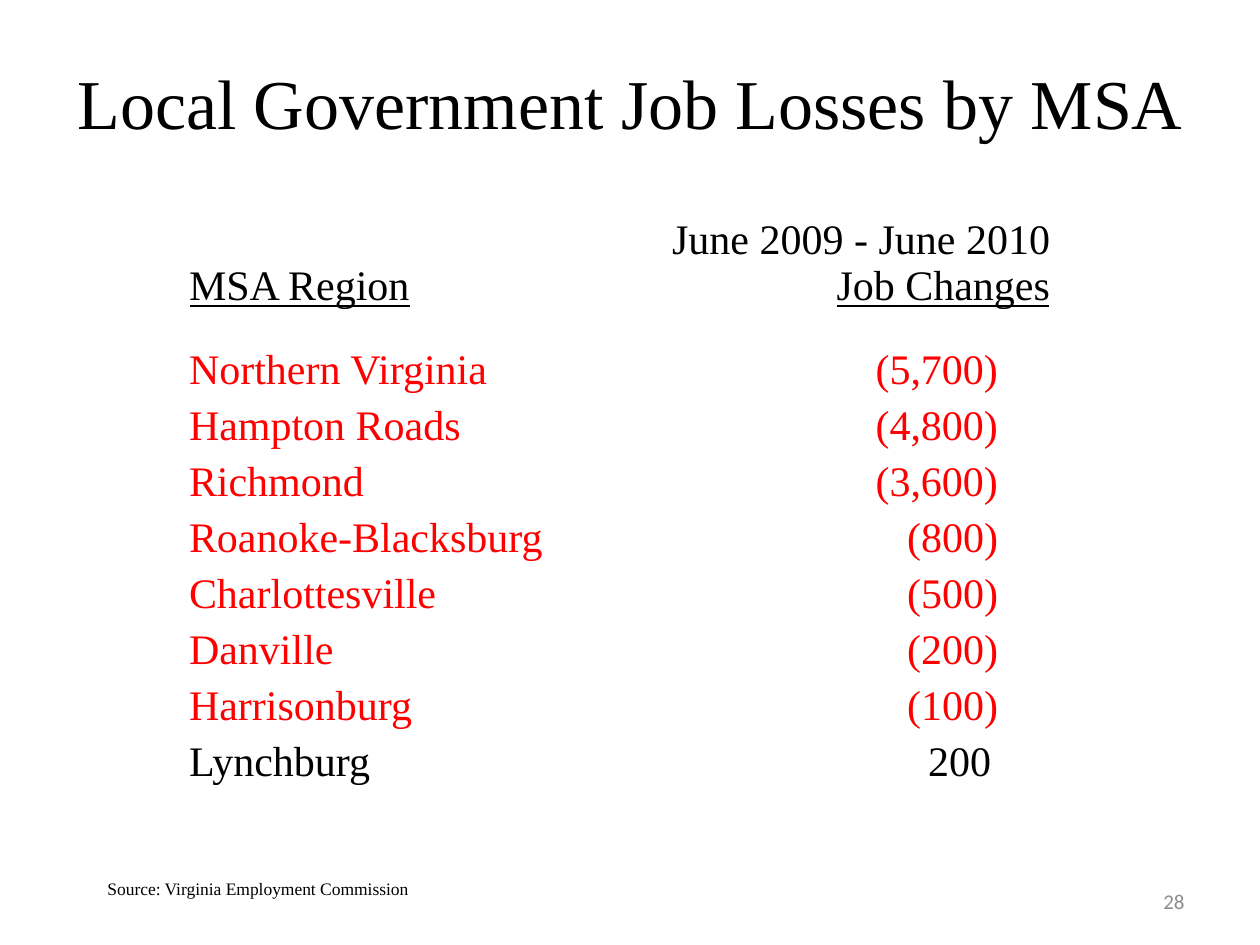
from pptx import Presentation
from pptx.dml.color import RGBColor
from pptx.enum.text import MSO_ANCHOR, PP_ALIGN
from pptx.util import Emu, Pt

TITLE = "Local Government Job Losses by MSA"
HEADINGS = ("MSA Region", ("June 2009 - June 2010", "Job Changes"))
JOB_CHANGES = [
    ("Northern Virginia", "(5,700)"),
    ("Hampton Roads", "(4,800)"),
    ("Richmond", "(3,600)"),
    ("Roanoke-Blacksburg", "(800)"),
    ("Charlottesville", "(500)"),
    ("Danville", "(200)"),
    ("Harrisonburg", "(100)"),
    ("Lynchburg", "200"),
]
SOURCE = "Source: Virginia Employment Commission"
PAGE = "28"

BLACK = RGBColor(0, 0, 0)
RED = RGBColor(255, 0, 0)
GRAY = RGBColor(0x8C, 0x8C, 0x8C)
SERIF, SANS = "Times New Roman", "Calibri"
LEFT, CENTER, RIGHT = PP_ALIGN.LEFT, PP_ALIGN.CENTER, PP_ALIGN.RIGHT
TOP, MIDDLE, BOTTOM = MSO_ANCHOR.TOP, MSO_ANCHOR.MIDDLE, MSO_ANCHOR.BOTTOM

COLUMN_WIDTHS = (425, 436)
HEADING_HEIGHT, FIRST_HEIGHT, ROW_HEIGHT = 142, 84, 56
LOSS_INSET, GAIN_INSET = 52, 59


def px(length):
    return Emu(round(length * 914400 / 126))


def write(frame, *lines, size=24, font=SERIF, color=BLACK, align=LEFT, underline_last=False):
    for i, line in enumerate(lines):
        paragraph = frame.paragraphs[0] if i == 0 else frame.add_paragraph()
        paragraph.alignment = align
        run = paragraph.add_run()
        run.text = line
        run.font.size = Pt(size)
        run.font.name = font
        run.font.bold = False
        run.font.color.rgb = color
        run.font.underline = underline_last and i == len(lines) - 1


def add_note(slide, text, left, top, width, height, anchor=TOP, wrap=True, **text_format):
    frame = slide.shapes.add_textbox(px(left), px(top), px(width), px(height)).text_frame
    frame.word_wrap = wrap
    frame.vertical_anchor = anchor
    write(frame, text, **text_format)


def fill_cell(cell, *lines, inset=0, **text_format):
    cell.fill.background()
    cell.vertical_anchor = BOTTOM
    cell.margin_left = cell.margin_top = cell.margin_bottom = 0
    cell.margin_right = px(inset)
    write(cell.text_frame, *lines, **text_format)


def add_job_table(slide):
    heights = [HEADING_HEIGHT, FIRST_HEIGHT] + [ROW_HEIGHT] * (len(JOB_CHANGES) - 1)
    table = slide.shapes.add_table(
        len(heights), len(COLUMN_WIDTHS), px(189), px(168),
        px(sum(COLUMN_WIDTHS)), px(sum(heights))).table
    table.first_row = table.horz_banding = False
    for column, width in zip(table.columns, COLUMN_WIDTHS):
        column.width = px(width)
    for row, height in zip(table.rows, heights):
        row.height = px(height)

    region_heading, change_heading = HEADINGS
    fill_cell(table.cell(0, 0), region_heading, underline_last=True)
    fill_cell(table.cell(0, 1), *change_heading, align=RIGHT, underline_last=True)
    for i, (region, change) in enumerate(JOB_CHANGES, start=1):
        is_loss = change.startswith("(")
        color = RED if is_loss else BLACK
        fill_cell(table.cell(i, 0), region, color=color)
        fill_cell(table.cell(i, 1), change, color=color, align=RIGHT,
                  inset=LOSS_INSET if is_loss else GAIN_INSET)


def main():
    prs = Presentation()
    prs.slide_width, prs.slide_height = px(1260), px(945)
    slide = prs.slides.add_slide(prs.slide_layouts[5])

    title = slide.shapes.title
    title.left, title.top, title.width, title.height = px(63), px(53), px(1134), px(98)
    title.text_frame.vertical_anchor = MIDDLE
    write(title.text_frame, TITLE, size=40, align=CENTER)

    add_note(slide, PAGE, 903, 876, 294, 50, anchor=MIDDLE,
             size=12, font=SANS, color=GRAY, align=RIGHT)
    add_job_table(slide)
    add_note(slide, SOURCE, 95, 872, 333, 34, wrap=False, size=10)

    prs.save("out.pptx")


if __name__ == "__main__":
    main()
